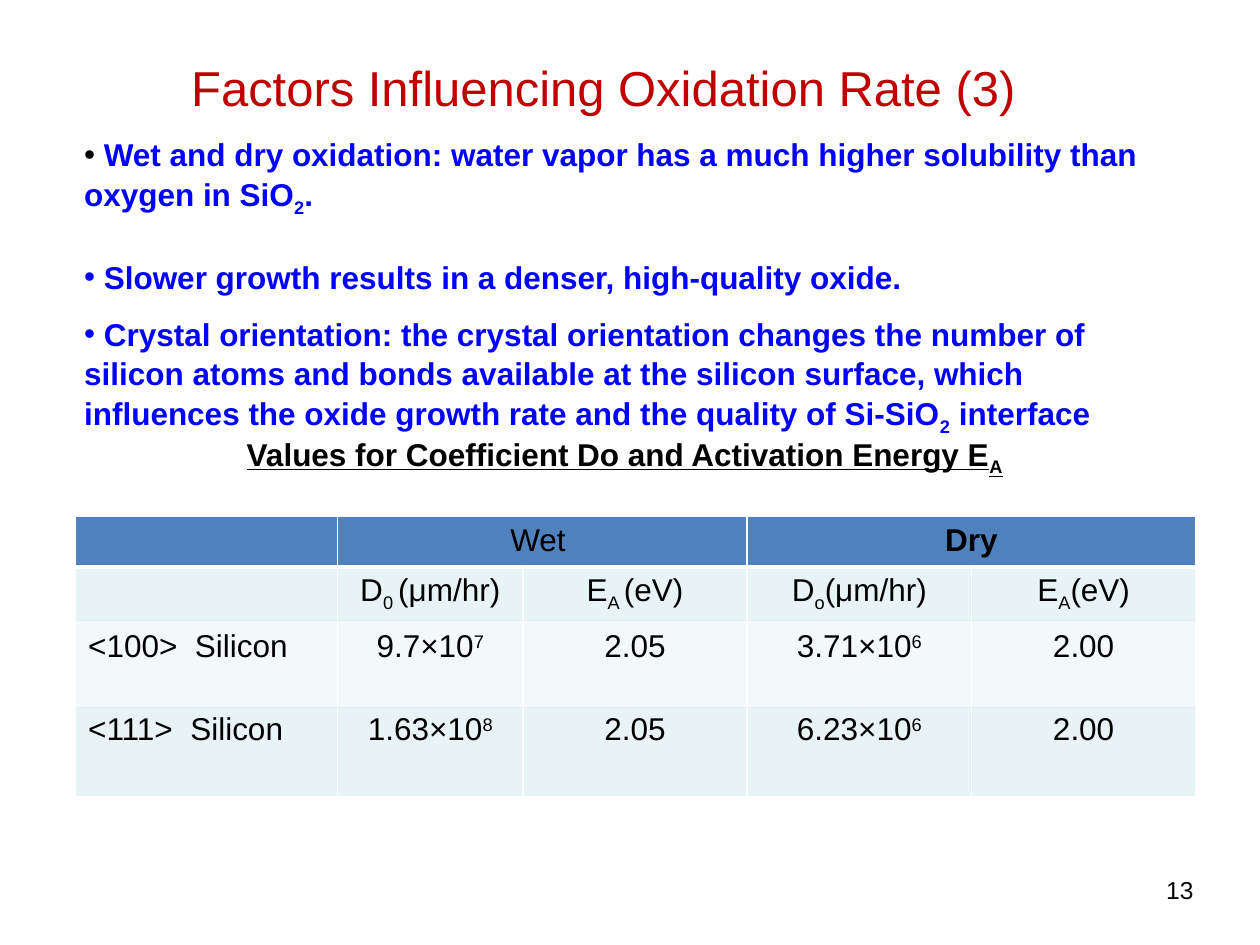
"""Builds a slide on factors influencing the oxidation rate of silicon."""
from dataclasses import dataclass
from typing import Optional

from lxml.etree import SubElement
from pptx import Presentation
from pptx.dml.color import RGBColor
from pptx.enum.text import MSO_ANCHOR as Anchor, PP_ALIGN as Align
from pptx.oxml.ns import qn
from pptx.util import Pt

BLACK, BLUE, RED, WHITE = "000000", "0000FF", "C00000", "FFFFFF"
HEADER, BAND, LIGHT = "4F81BD", "E7F3F4", "F3F9FA"
SUB, SUPER = -25000, 30000


@dataclass
class Span:
    text: str
    baseline: int = 0
    color: Optional[str] = None


@dataclass
class Para:
    spans: list[Span]
    size: float = 18
    color: str = BLACK
    bold: bool = False
    underline: bool = False
    align: Align = Align.LEFT
    bullet: bool = False
    before: float = 0
    spacing: float = 1
    margin: float = 0
    indent: float = 0


@dataclass
class Box:
    left: float
    top: float
    width: float
    height: float
    paras: list[Para]
    anchor: Anchor = Anchor.TOP


def rgb(code: str) -> RGBColor:
    return RGBColor.from_string(code)


def write(frame, paras: list[Para]) -> None:
    for index, para in enumerate(paras):
        target = frame.add_paragraph() if index else frame.paragraphs[0]
        target.alignment = para.align
        target.line_spacing = para.spacing
        if para.before:
            target.space_before = Pt(para.before)
        props = target._p.get_or_add_pPr()
        props.set("marL", str(Pt(para.margin)))
        props.set("indent", str(Pt(para.indent)))
        if para.bullet:
            SubElement(props, qn("a:buFont"), typeface="Arial")
            SubElement(props, qn("a:buChar"), char="•")
        font = target.font
        font.name, font.size = "Arial", Pt(para.size)
        font.bold, font.underline = para.bold, para.underline
        font.color.rgb = rgb(para.color)
        for span in para.spans:
            run = target.add_run()
            run.text = span.text
            if span.baseline:
                run._r.get_or_add_rPr().set("baseline", str(span.baseline))
            if span.color:
                run.font.color.rgb = rgb(span.color)


def draw_box(page, box: Box) -> None:
    shape = page.shapes.add_textbox(Pt(box.left), Pt(box.top), Pt(box.width), Pt(box.height))
    frame = shape.text_frame
    frame.word_wrap = True
    frame.vertical_anchor = box.anchor
    write(frame, box.paras)


def draw_borders(cell, row: int) -> None:
    props = cell._tc.get_or_add_tcPr()
    widths = {"L": 1, "R": 1, "T": 3 if row == 1 else 1, "B": 3 if row == 0 else 1}
    for position, (side, width) in enumerate(widths.items()):
        line = SubElement(props, qn(f"a:ln{side}"), w=str(Pt(width)))
        fill = SubElement(line, qn("a:solidFill"))
        SubElement(fill, qn("a:srgbClr"), val=WHITE)
        props.insert(position, line)


def draw_table(page, rows: list[list[Optional[Para]]]) -> None:
    widths = [149.8, 105.8, 128.2, 128.2, 128.2]
    heights = [28.8, 28.8, 47.5, 51.8]
    fills = [HEADER, BAND, LIGHT, BAND]
    table = page.shapes.add_table(
        len(heights), len(widths), Pt(43.2), Pt(295.2), Pt(sum(widths)), Pt(sum(heights))
    ).table
    for column, width in zip(table.columns, widths):
        column.width = Pt(width)
    for index, (row, height) in enumerate(zip(rows, heights)):
        table.rows[index].height = Pt(height)
        for cell, para in zip(table.rows[index].cells, row):
            cell.fill.solid()
            cell.fill.fore_color.rgb = rgb(fills[index])
            draw_borders(cell, index)
            if para:
                write(cell.text_frame, [para])
    for first in (1, 3):
        table.cell(0, first).merge(table.cell(0, first + 1))


def centred(text: str, raised: str = "", lowered: str = "", rest: str = "", bold: bool = False) -> Para:
    parts = [Span(text), Span(raised, SUPER), Span(lowered, SUB), Span(rest)]
    return Para([part for part in parts if part.text], align=Align.CENTER, bold=bold)


def point(*spans: Span, before: float = 0) -> Para:
    return Para(list(spans), color=BLUE, bold=True, bullet=True, before=before, spacing=1.05)


def main() -> None:
    deck = Presentation()
    deck.slide_width, deck.slide_height = Pt(720), Pt(540)
    page = deck.slides.add_slide(deck.slide_layouts[6])

    number = Para([Span("13")], size=14, align=Align.RIGHT)
    title = Para([Span("Factors Influencing Oxidation Rate (3)")], size=28, color=RED, margin=54, indent=-18)
    points = [
        point(
            Span(" ", color=BLACK),
            Span("Wet and dry oxidation: water vapor has a much higher solubility than oxygen in SiO"),
            Span("2", SUB),
            Span("."),
        ),
        point(Span(" Slower growth results in a denser, high-quality oxide."), before=21.7),
        point(
            Span(
                " Crystal orientation: the crystal orientation changes the number of silicon atoms "
                "and bonds available at the silicon surface, which influences the oxide growth rate "
                "and the quality of Si-SiO"
            ),
            Span("2", SUB),
            Span(" interface"),
            before=9.7,
        ),
    ]
    caption = Para(
        [Span("Values for Coefficient Do and Activation Energy E"), Span("A", SUB)], bold=True, underline=True
    )
    rows = [
        [None, centred("Wet "), None, centred("Dry", bold=True), None],
        [
            None,
            centred("D", lowered="0 ", rest="(μm/hr)"),
            centred("E", lowered="A ", rest="(eV)"),
            centred("D", lowered="o", rest="(μm/hr)"),
            centred("E", lowered="A", rest="(eV)"),
        ],
    ]
    for name, wet, wet_power, dry, dry_power in (
        ("<100>  Silicon", "9.7×10", "7", "3.71×10", "6"),
        ("<111>  Silicon", "1.63×10", "8", "6.23×10", "6"),
    ):
        rows.append(
            [Para([Span(name)]), centred(wet, wet_power), centred("2.05"), centred(dry, dry_power), centred("2.00")]
        )

    draw_box(page, Box(521.3, 489.6, 167.8, 37.4, [number], Anchor.MIDDLE))
    draw_box(page, Box(66.2, 29.5, 583.2, 41, [title]))
    draw_box(page, Box(41, 72.7, 640.1, 191.5, points))
    draw_table(page, rows)
    draw_box(page, Box(133.9, 244.8, 459.4, 28.8, [caption]))
    deck.save("out.pptx")


if __name__ == "__main__":
    main()
